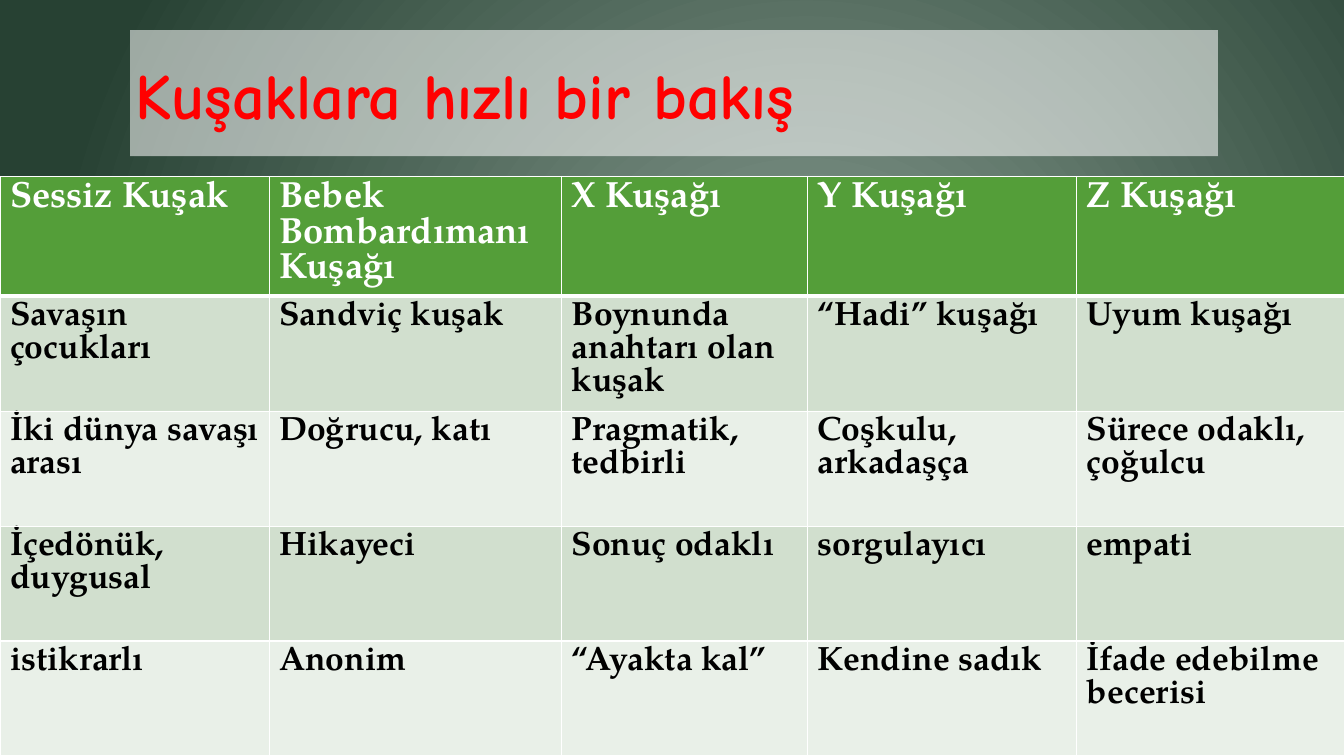
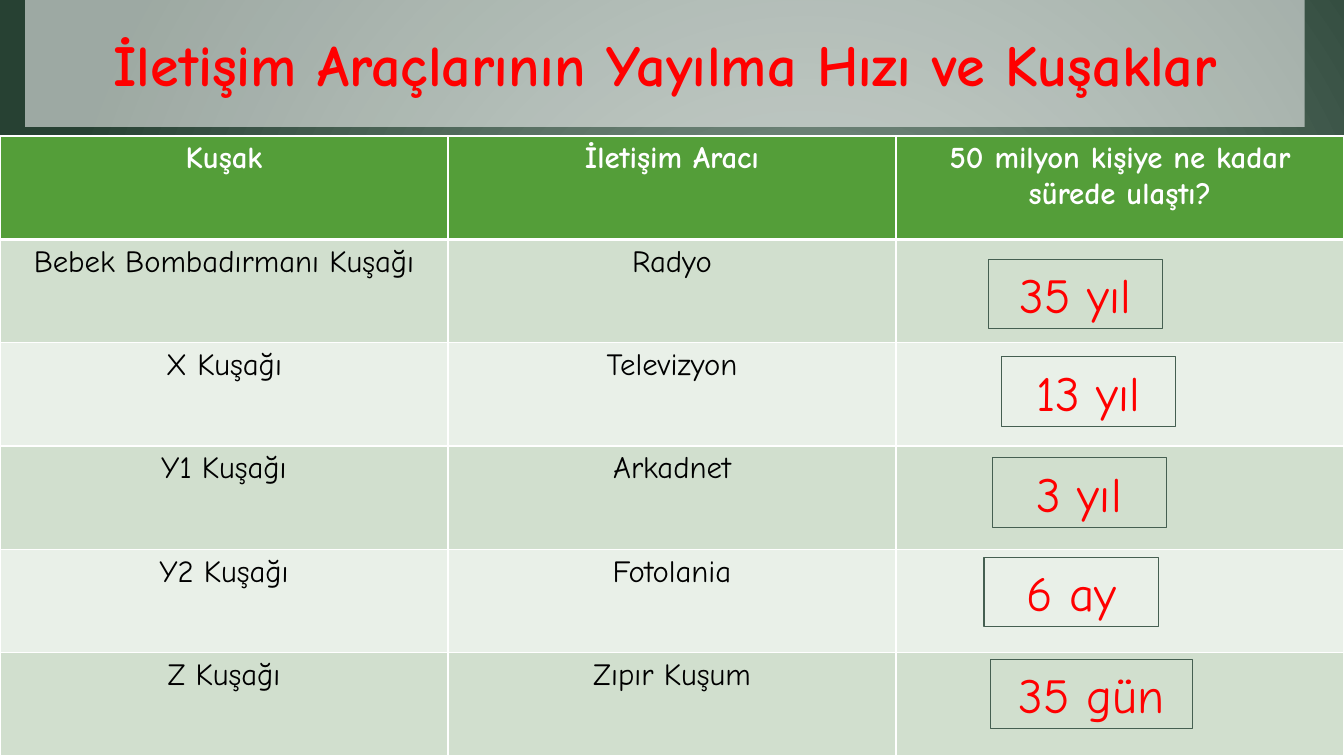
"""Build two slides on generations: a quick overview and how fast media spread."""
from lxml import etree
from pptx import Presentation
from pptx.dml.color import RGBColor
from pptx.enum.shapes import MSO_SHAPE
from pptx.enum.text import MSO_ANCHOR, PP_ALIGN
from pptx.oxml.ns import qn
from pptx.util import Inches, Pt

RECT = MSO_SHAPE.RECTANGLE
MIDDLE = MSO_ANCHOR.MIDDLE
LEFT, CENTER = PP_ALIGN.LEFT, PP_ALIGN.CENTER


class Theme:
    glow, edge = "889D91", "274133"
    white, black, red = "FFFFFF", "000000", "FF0000"
    head, frame = "549E39", "455F51"
    bands = ("D1DFCE", "E9F0E8")
    hand, serif = "Comic Neue", "TeX Gyre Pagella"
    answer = 35
    thin, thick, hair = 1, 3, 0.75
    veil = 55


def write(frame, text, font=Theme.hand, size=24, color=Theme.black, bold=False, align=LEFT):
    para = frame.paragraphs[0]
    para.alignment = align
    run = para.add_run()
    run.text = text
    run.font.name = font
    run.font.size = Pt(size)
    run.font.bold = bold
    run.font.color.rgb = RGBColor.from_string(color)


def add_box(slide, at):
    box = slide.shapes.add_shape(RECT, *map(Inches, at))
    box.shadow.inherit = False
    frame = box.text_frame
    frame.word_wrap = True
    frame.vertical_anchor = MIDDLE
    return box


decks = [
    {
        "title": "Kuşaklara hızlı bir bakış",
        "at": (1.29, 0.3, 10.79, 1.25), "size": 46, "align": LEFT,
        "top": 1.75, "cols": (2.67, 2.9, 2.44, 2.67, 2.67),
        "heights": (1.19, 1.14), "font": Theme.serif, "sizes": (26, 24), "bold": True,
        "rows": [
            ("Sessiz Kuşak", "Bebek Bombardımanı Kuşağı", "X Kuşağı", "Y Kuşağı", "Z Kuşağı"),
            ("Savaşın çocukları", "Sandviç kuşak", "Boynunda anahtarı olan kuşak",
             "“Hadi” kuşağı", "Uyum kuşağı"),
            ("İki dünya savaşı arası", "Doğrucu, katı", "Pragmatik, tedbirli",
             "Coşkulu, arkadaşça", "Sürece odaklı, çoğulcu"),
            ("İçedönük, duygusal", "Hikayeci", "Sonuç odaklı", "sorgulayıcı", "empati"),
            ("istikrarlı", "Anonim", "“Ayakta kal”", "Kendine sadık", "İfade edebilme becerisi"),
        ],
        "answers": [],
    },
    {
        "title": "İletişim Araçlarının Yayılma Hızı ve Kuşaklar",
        "at": (0.25, 0, 12.69, 1.26), "size": 41.4, "align": CENTER,
        "top": 1.35, "cols": (13.33 / 3,) * 3,
        "heights": (6.15 / 6, 6.15 / 6), "font": Theme.hand, "sizes": (22, 22), "bold": False,
        "rows": [
            ("Kuşak", "İletişim Aracı", "50 milyon kişiye ne kadar sürede ulaştı?"),
            ("Bebek Bombadırmanı Kuşağı", "Radyo", ""),
            ("X Kuşağı", "Televizyon", ""),
            ("Y1 Kuşağı", "Arkadnet", ""),
            ("Y2 Kuşağı", "Fotolania", ""),
            ("Z Kuşağı", "Zıpır Kuşum", ""),
        ],
        "answers": [
            ("35 yıl", 9.8, 2.57, 1.73),
            ("13 yıl", 9.93, 3.54, 1.73),
            ("3 yıl", 9.84, 4.54, 1.73),
            ("6 ay", 9.76, 5.53, 1.73),
            ("35 gün", 9.82, 6.54, 2.01),
        ],
    },
]

prs = Presentation()
prs.slide_width, prs.slide_height = Inches(13.33), Inches(7.5)

master = prs.slide_master
fill = master.background.fill
fill.gradient()
for stop, color in zip(fill.gradient_stops, (Theme.glow, Theme.edge)):
    stop.color.rgb = RGBColor.from_string(color)
grad = master.element.find(".//" + qn("p:bgPr")).find(qn("a:gradFill"))
for line in grad.findall(qn("a:lin")):
    grad.remove(line)
radial = etree.SubElement(grad, qn("a:path"), path="circle")
etree.SubElement(radial, qn("a:fillToRect"), l="60000", t="50000", r="40000", b="50000")

for deck in decks:
    slide = prs.slides.add_slide(prs.slide_layouts[6])

    banner = add_box(slide, deck["at"])
    banner.fill.solid()
    banner.fill.fore_color.rgb = RGBColor.from_string(Theme.white)
    tint = banner.fill._xPr.find(qn("a:solidFill"))[0]
    etree.SubElement(tint, qn("a:alpha"), val=str(Theme.veil * 1000))
    banner.line.fill.background()
    frame = banner.text_frame
    frame.margin_left = frame.margin_right = Inches(0.05)
    write(frame, deck["title"], size=deck["size"], color=Theme.red, bold=True,
          align=deck["align"])

    rows, cols = deck["rows"], deck["cols"]
    first, other = deck["heights"]
    tall = first + other * (len(rows) - 1)
    table = slide.shapes.add_table(len(rows), len(cols), 0, Inches(deck["top"]),
                                   Inches(sum(cols)), Inches(tall)).table
    for col, width in zip(table.columns, cols):
        col.width = Inches(width)
    for r, row in enumerate(rows):
        head = r == 0
        table.rows[r].height = Inches(first if head else other)
        for c, text in enumerate(row):
            cell = table.cell(r, c)
            props = cell._tc.get_or_add_tcPr()
            for side in "LRTB":
                heavy = (r, side) in ((0, "B"), (1, "T"))
                width = Theme.thick if heavy else Theme.thin
                line = etree.SubElement(props, qn("a:ln" + side), w=str(Pt(width)))
                solid = etree.SubElement(line, qn("a:solidFill"))
                etree.SubElement(solid, qn("a:srgbClr"), val=Theme.white)
            cell.fill.solid()
            shade = Theme.head if head else Theme.bands[(r - 1) % 2]
            cell.fill.fore_color.rgb = RGBColor.from_string(shade)
            if text:
                write(cell.text_frame, text, font=deck["font"],
                      size=deck["sizes"][0 if head else 1],
                      color=Theme.white if head else Theme.black,
                      bold=head or deck["bold"], align=deck["align"])

    for text, left, top, width in deck["answers"]:
        box = add_box(slide, (left, top, width, 0.69))
        box.fill.background()
        box.line.color.rgb = RGBColor.from_string(Theme.frame)
        box.line.width = Pt(Theme.hair)
        write(box.text_frame, text, size=Theme.answer, color=Theme.red, align=CENTER)

prs.save("out.pptx")
